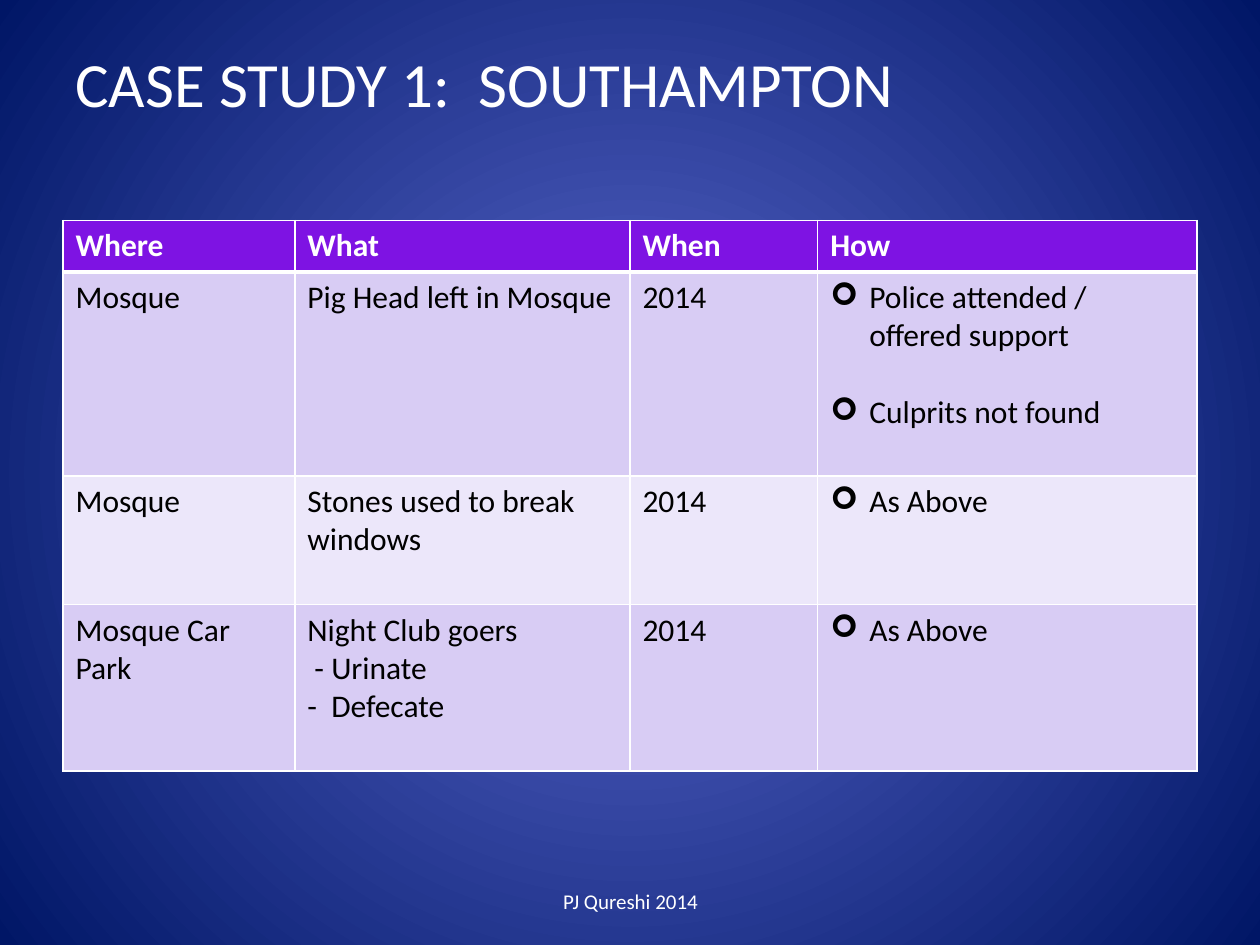
from lxml.etree import SubElement
from pptx import Presentation
from pptx.dml.color import RGBColor
from pptx.enum.text import MSO_ANCHOR, PP_ALIGN
from pptx.oxml import parse_xml
from pptx.oxml.ns import nsdecls, qn
from pptx.util import Inches, Pt

WHITE = RGBColor(0xFF, 0xFF, 0xFF)
BLACK = RGBColor(0x00, 0x00, 0x00)
GLOW = RGBColor(0x5B, 0x69, 0xCE)
NAVY = RGBColor(0x00, 0x16, 0x66)
PURPLE = RGBColor(0x7E, 0x13, 0xE3)
LILAC = RGBColor(0xD8, 0xCC, 0xF4)
PALE_LILAC = RGBColor(0xEC, 0xE7, 0xFA)

COLUMN_WIDTHS = [1.84, 2.66, 1.49, 3.01]
ROW_HEIGHTS = [0.41, 1.62, 1.02, 1.32]
ROW_FILLS = [PURPLE, LILAC, PALE_LILAC, LILAC]
HOW_COLUMN = 3
ROWS = [
    ["Where", "What", "When", "How"],
    ["Mosque", "Pig Head left in Mosque", "2014",
     "Police attended / offered support\nCulprits not found"],
    ["Mosque", "Stones used to break windows", "2014", "As Above"],
    ["Mosque Car Park", "Night Club goers\n - Urinate\n-  Defecate", "2014", "As Above"],
]


def write_text(frame, text, **font_format):
    """Fill the frame with one paragraph per line of text."""
    frame.word_wrap = True
    frame.text = text
    for para in frame.paragraphs:
        for span in para.runs:
            span.font.name = "Calibri"
            span.font.color.rgb = font_format["color"]
            span.font.size = Pt(font_format["size"])
            span.font.bold = font_format.get("bold", False)


def add_border(cell, side, points):
    line = SubElement(cell._tc.get_or_add_tcPr(), qn(f"a:ln{side}"), w=str(Pt(points)))
    fill = SubElement(line, qn("a:solidFill"))
    SubElement(fill, qn("a:srgbClr"), val=str(WHITE))


deck = Presentation()
deck.slide_width = Inches(10)
deck.slide_height = Inches(7.5)
page = deck.slides.add_slide(deck.slide_layouts[6])

# Radial background
background = page.background.fill
background.gradient()
for stop, color in zip(background.gradient_stops, [GLOW, NAVY]):
    stop.color.rgb = color
linear = next(page._element.iter(qn("a:lin")))
linear.getparent().replace(linear, parse_xml(
    f'<a:path {nsdecls("a")} path="circle">'
    '<a:fillToRect l="50000" t="50000" r="50000" b="50000"/></a:path>'))

# Title and footer
title = page.shapes.add_textbox(Inches(0.5), Inches(0.3), Inches(9), Inches(1.25))
write_text(title.text_frame, "CASE STUDY 1:  SOUTHAMPTON", size=36, color=WHITE)

footer = page.shapes.add_textbox(Inches(3.42), Inches(6.95), Inches(3.17), Inches(0.4))
write_text(footer.text_frame, "PJ Qureshi 2014", size=12, color=WHITE)
footer.text_frame.vertical_anchor = MSO_ANCHOR.MIDDLE
footer.text_frame.paragraphs[0].alignment = PP_ALIGN.CENTER

# Incident table
table = page.shapes.add_table(
    len(ROWS), len(COLUMN_WIDTHS), Inches(0.5), Inches(1.75),
    Inches(sum(COLUMN_WIDTHS)), Inches(sum(ROW_HEIGHTS))).table
for column, width in zip(table.columns, COLUMN_WIDTHS):
    column.width = Inches(width)
for row, height in zip(table.rows, ROW_HEIGHTS):
    row.height = Inches(height)

for row_index, texts in enumerate(ROWS):
    is_header = row_index == 0
    for column_index, text in enumerate(texts):
        cell = table.cell(row_index, column_index)
        write_text(cell.text_frame, text, size=18, bold=is_header,
                   color=WHITE if is_header else BLACK)
        borders = {"L": 1, "R": 1, "T": 3 if row_index == 1 else 1, "B": 3 if is_header else 1}
        for side, points in borders.items():
            add_border(cell, side, points)
        cell.fill.solid()
        cell.fill.fore_color.rgb = ROW_FILLS[row_index]

        if column_index == HOW_COLUMN and not is_header:
            for para in cell.text_frame.paragraphs:
                para.space_after = Pt(22)
                properties = para._p.get_or_add_pPr()
                properties.set("marL", str(Inches(0.31)))
                properties.set("indent", str(-Inches(0.31)))
                SubElement(properties, qn("a:buFont"), typeface="Wingdings")
                SubElement(properties, qn("a:buChar"), char="➢")

deck.save("out.pptx")
